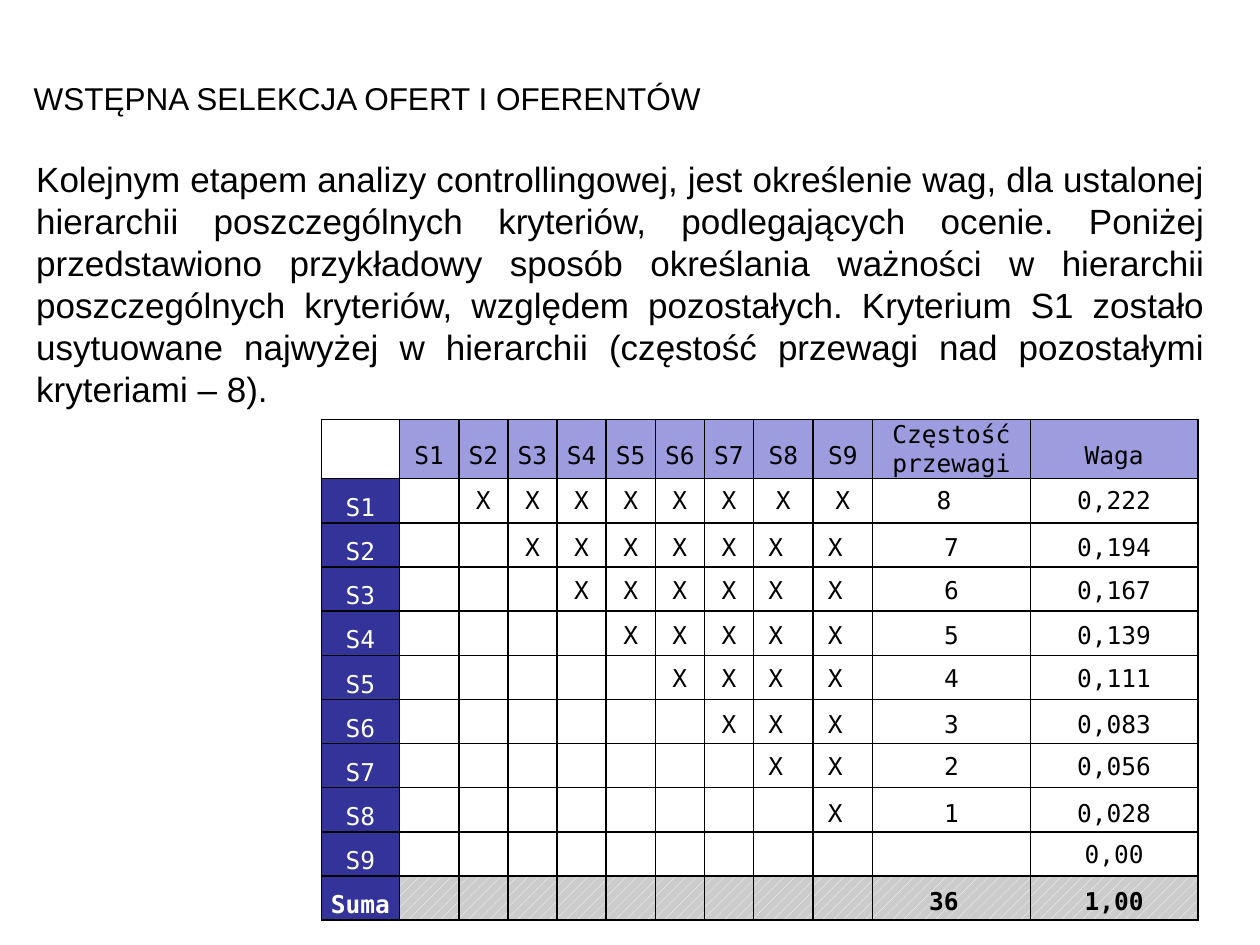
import itertools

import lxml.etree
import pptx
import pptx.dml.color
import pptx.enum.dml
import pptx.enum.text
import pptx.oxml.ns
import pptx.util

Cm = pptx.util.Cm
Pt = pptx.util.Pt
RGBColor = pptx.dml.color.RGBColor
ALIGN = pptx.enum.text.PP_ALIGN
MIDDLE = pptx.enum.text.MSO_ANCHOR.MIDDLE

BLACK = RGBColor(0x00, 0x00, 0x00)
WHITE = RGBColor(0xFF, 0xFF, 0xFF)
LILAC = RGBColor(0x9C, 0x9C, 0xDF)
NAVY = RGBColor(0x33, 0x33, 0x99)
GREY = RGBColor(0xCC, 0xCC, 0xCC)
SANS = "Arial"
MONO = "DejaVu Sans Mono"


def format_text(paragraph, font_name, size, align, color=BLACK, bold=False):
    paragraph.alignment = align
    for run in paragraph.runs:
        run.font.name = font_name
        run.font.size = Pt(size)
        run.font.color.rgb = color
        run.font.bold = bold


def add_text(text, left, top, width, height, font_name=MONO, size=14,
             align=ALIGN.CENTER, bold=False):
    box = slide.shapes.add_textbox(Cm(left), Cm(top), Cm(width), Cm(height))
    frame = box.text_frame
    frame.word_wrap = True
    frame.vertical_anchor = MIDDLE
    frame.text = text
    format_text(frame.paragraphs[0], font_name, size, align, bold=bold)
    return frame.paragraphs[0]


presentation = pptx.Presentation()
presentation.slide_width = Cm(25.4)
presentation.slide_height = Cm(19.05)
slide = presentation.slides.add_slide(presentation.slide_layouts[6])

body = add_text(
    "Kolejnym etapem analizy controllingowej, jest określenie wag, dla ustalonej "
    "hierarchii poszczególnych kryteriów, podlegających ocenie. Poniżej "
    "przedstawiono przykładowy sposób określania ważności w hierarchii "
    "poszczególnych kryteriów, względem pozostałych. Kryterium S1 zostało "
    "usytuowane najwyżej w hierarchii (częstość przewagi nad pozostałymi "
    "kryteriami – 8).",
    0, 3.18, 24.54, 5.08, SANS, 20, ALIGN.JUSTIFY)
body._p.get_or_add_pPr().set("marL", str(Cm(0.48)))
add_text("WSTĘPNA SELEKCJA OFERT I OFERENTÓW", 0.43, 1.47, 19.89, 1.02,
         SANS, 18, ALIGN.LEFT)

criteria = [f"S{number}" for number in range(1, 10)]
headers = ["", *criteria, "Częstość przewagi", "Waga"]
row_labels = ["", *criteria, "Suma"]
column_widths = [1.57, 1.2] + [0.99] * 6 + [1.2, 1.2, 3.18, 3.38]
row_heights = [1.19] + [0.89] * 10
table_left, table_top = 6.48, 8.46

table_frame = slide.shapes.add_table(
    len(row_heights), len(column_widths), Cm(table_left), Cm(table_top),
    Cm(sum(column_widths)), Cm(sum(row_heights)))
table = table_frame.table
table.first_row = False
table.horz_banding = False
for column, width in zip(table.columns, column_widths):
    column.width = Cm(width)
for row, height in zip(table.rows, row_heights):
    row.height = Cm(height)

for row_index, column_index in itertools.product(
        range(len(row_heights)), range(len(column_widths))):
    cell = table.cell(row_index, column_index)
    cell.margin_left = cell.margin_right = Cm(0.13)
    cell.margin_top = cell.margin_bottom = 0
    cell.vertical_anchor = MIDDLE
    properties = cell._tc.get_or_add_tcPr()
    for side in ("lnL", "lnR", "lnT", "lnB"):
        line = lxml.etree.SubElement(
            properties, pptx.oxml.ns.qn(f"a:{side}"), w=str(Pt(1)))
        line_fill = lxml.etree.SubElement(line, pptx.oxml.ns.qn("a:solidFill"))
        lxml.etree.SubElement(
            line_fill, pptx.oxml.ns.qn("a:srgbClr"), val=str(BLACK))

    is_total = row_labels[row_index] == "Suma"
    if is_total and column_index > 0:
        cell.fill.patterned()
        cell.fill.pattern = pptx.enum.dml.MSO_PATTERN.PERCENT_20
        cell.fill.fore_color.rgb = WHITE
        cell.fill.back_color.rgb = GREY
    elif row_index == column_index == 0:
        cell.fill.background()
    else:
        cell.fill.solid()
        cell.fill.fore_color.rgb = (
            LILAC if row_index == 0 else NAVY if column_index == 0 else WHITE)

    if row_index == 0 or column_index == 0:
        label = headers[column_index] if row_index == 0 else row_labels[row_index]
        cell.text_frame.text = label
        paragraph = cell.text_frame.paragraphs[0]
        format_text(paragraph, MONO, 14, ALIGN.CENTER,
                    BLACK if row_index == 0 else WHITE, is_total)
        if label and label != "Częstość przewagi":
            paragraph.line_spacing = 1.5

column_lefts = list(itertools.accumulate(column_widths, initial=table_left))
mark_tops = [9.65, 10.59, 11.46, 12.37, 13.23, 14.15, 15.01, 15.95, 16.79, 17.73]
frequencies = ["8 ", "7", "6", "5", "4", "3", "2", "1", "", "36 "]
weights = ["0,222", "0,194", "0,167", "0,139", "0,111",
           "0,083", "0,056", "0,028", "0,00", "1,00"]

for row_index, (top, frequency, weight) in enumerate(
        zip(mark_tops, frequencies, weights), start=1):
    mark = "X" if row_index == 1 else "X "
    entries = {column: mark for column in range(row_index + 1, 10)}
    entries.update({10: frequency, 11: weight})
    for column_index, text in entries.items():
        if text:
            add_text(text, column_lefts[column_index], top,
                     column_widths[column_index], 0.86,
                     bold=row_labels[row_index] == "Suma")

presentation.save("out.pptx")
